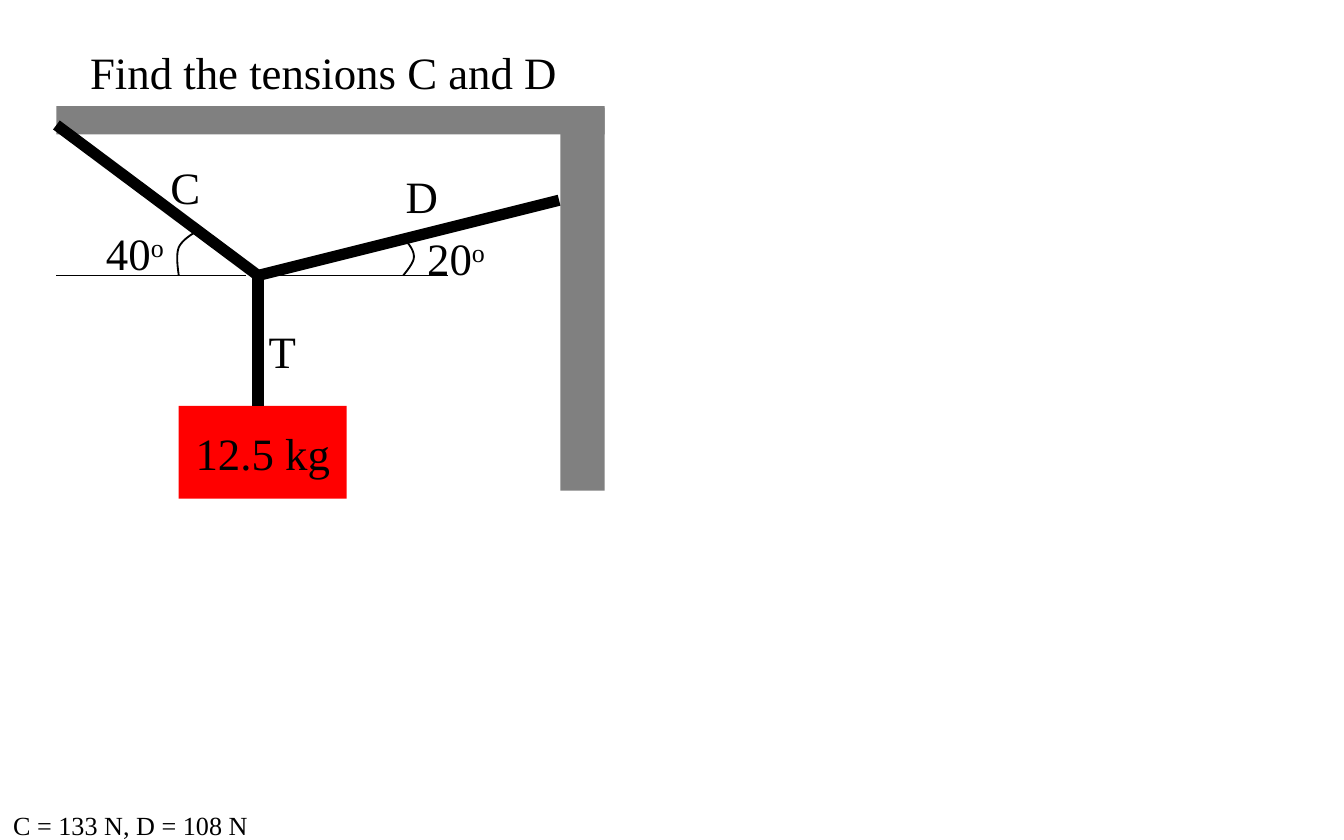
import lxml.etree
import pptx
import pptx.dml.color
import pptx.enum.shapes
import pptx.enum.text
import pptx.oxml.ns
import pptx.util

Inches = pptx.util.Inches
Pt = pptx.util.Pt
ALIGN = pptx.enum.text.PP_ALIGN
ANCHOR = pptx.enum.text.MSO_ANCHOR

BLACK, GREY, RED = "000000", "808080", "FF0000"
KNOT = (1.92, 2.05)
LABEL_HEIGHT = 0.5


def colour(value):
    return pptx.dml.color.RGBColor.from_string(value)


def bezier(start, first, second, end, steps=12):
    """Return points along a cubic curve, without its start."""
    points = []
    for step in range(1, steps + 1):
        t = step / steps
        weights = ((1 - t) ** 3, 3 * t * (1 - t) ** 2, 3 * t * t * (1 - t), t ** 3)
        points.append(tuple(
            sum(weight * value for weight, value in zip(weights, axis))
            for axis in zip(start, first, second, end)))
    return points


class Diagram:
    """Holds the text style and the page being drawn."""

    font_name = "Times New Roman"

    def __init__(self, page):
        self.page = page

    def set_text(self, box, text, size=24, raised="", align=ALIGN.LEFT, anchor=ANCHOR.TOP):
        frame = box.text_frame
        frame_format = {"word_wrap": False, "vertical_anchor": anchor,
                        "auto_size": pptx.enum.text.MSO_AUTO_SIZE.NONE}
        for name, value in frame_format.items():
            setattr(frame, name, value)
        para = frame.paragraphs[0]
        para.alignment = align
        for part in filter(None, (text, raised)):
            span = para.add_run()
            span.text = part
            for name, value in {"name": self.font_name, "size": Pt(size)}.items():
                setattr(span.font, name, value)
            span.font.color.rgb = colour(BLACK)
        if raised:
            span._r.get_or_add_rPr().set("baseline", "30000")

    def title(self, text, *place):
        box = self.page.shapes.title
        for name, value in zip(("left", "top", "width", "height"), place):
            setattr(box, name, Inches(value))
        self.set_text(box, text)

    def label(self, text, left, top, width, height=LABEL_HEIGHT, **style):
        box = self.page.shapes.add_textbox(*map(Inches, (left, top, width, height)))
        self.set_text(box, text, **style)

    def block(self, fill, *place):
        box = self.page.shapes.add_shape(
            pptx.enum.shapes.MSO_SHAPE.RECTANGLE, *map(Inches, place))
        box.shadow.inherit = False
        box.fill.solid()
        box.fill.fore_color.rgb = colour(fill)
        box.line.fill.background()
        return box

    def line(self, start, end, width=1):
        line = self.page.shapes.add_connector(
            pptx.enum.shapes.MSO_CONNECTOR.STRAIGHT, *map(Inches, (*start, *end)))
        line.line.color.rgb = colour(BLACK)
        line.line.width = Pt(width)
        lxml.etree.SubElement(line.element.spPr, pptx.oxml.ns.qn("a:effectLst"))

    def arc(self, start, *controls):
        """Draw a chain of cubic curves, three points for each."""
        points = [start]
        for index in range(0, len(controls), 3):
            points += bezier(points[-1], *controls[index:index + 3])
        corners = [tuple(map(Inches, point)) for point in points]
        builder = self.page.shapes.build_freeform(*corners[0])
        builder.add_line_segments(corners[1:], close=False)
        curve = builder.convert_to_shape()
        curve.shadow.inherit = False
        curve.fill.background()
        curve.line.color.rgb = colour(BLACK)
        curve.line.width = Pt(1)


def main():
    deck = pptx.Presentation()
    deck.slide_width, deck.slide_height = Inches(10), Inches(6.25)
    diagram = Diagram(deck.slides.add_slide(deck.slide_layouts[5]))

    diagram.title("Find the tensions C and D", 0.57, 0.28, 3.71, LABEL_HEIGHT)

    weight = diagram.block(RED, 1.33, 3.02, 1.25, 0.69)
    diagram.set_text(weight, "12.5 kg", align=ALIGN.CENTER, anchor=ANCHOR.MIDDLE)
    rope_t_end = (KNOT[0], 3.02)
    diagram.line(rope_t_end, KNOT, width=6)

    diagram.block(GREY, 0.42, 0.79, 4.08, 0.21)  # ceiling
    diagram.block(GREY, 4.17, 0.8, 0.33, 2.85)  # wall
    for rope_end in ((0.42, 0.93), (4.16, 1.49)):
        diagram.line(KNOT, rope_end, width=6)

    for start, end in ((1.83, 0.42), (3.33, KNOT[0])):
        diagram.line((start, KNOT[1]), (end, KNOT[1]))
    diagram.arc((1.5, 1.7), (1.43, 1.74), (1.36, 1.78), (1.33, 1.84),
                (1.31, 1.9), (1.32, 1.97), (1.33, 2.05))
    diagram.arc((3, 1.77), (3.04, 1.81), (3.08, 1.86), (3.08, 1.91),
                (3.08, 1.95), (3.04, 2), (3, 2.05))

    for angle, left, top in (("40", 0.69, 1.63), ("20", 3.08, 1.67)):
        diagram.label(angle, left, top, 0.65, raised="o")
    for rope, left, top, width in (("T", 1.9, 2.36, 0.41), ("C", 1.17, 1.14, 0.43),
                                   ("D", 2.92, 1.21, 0.45)):
        diagram.label(rope, left, top, width)
    diagram.label("C = 133 N, D = 108 N", 0, 5.97, 1.96, 0.34, size=14)

    deck.save("out.pptx")


if __name__ == "__main__":
    main()
